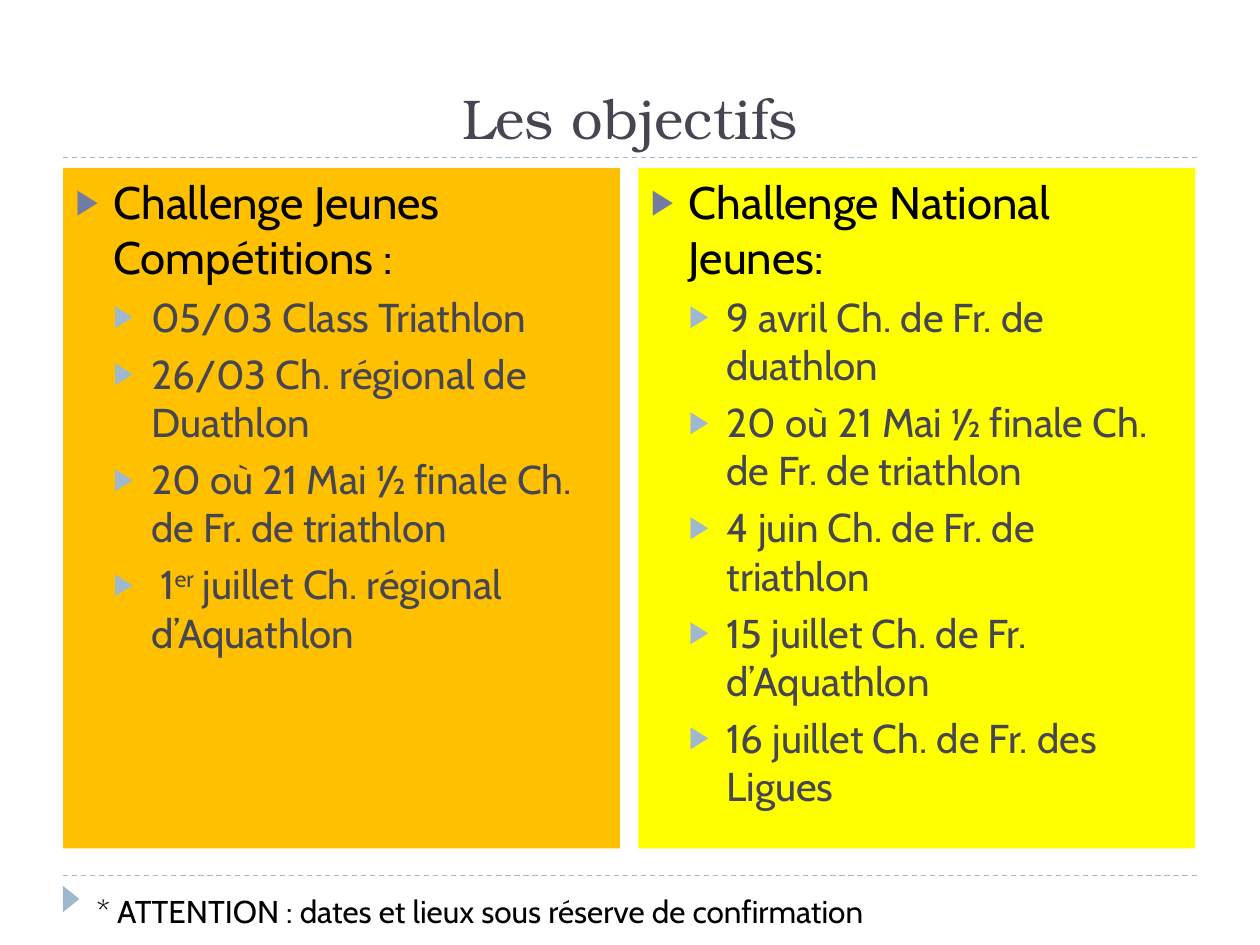
"""Build a slide of youth triathlon goals in two coloured lists."""
from dataclasses import dataclass

from lxml import etree
from pptx import Presentation
from pptx.dml.color import RGBColor
from pptx.enum.dml import MSO_LINE
from pptx.enum.shapes import MSO_CONNECTOR, MSO_SHAPE
from pptx.enum.text import MSO_ANCHOR, MSO_AUTO_SIZE, PP_ALIGN
from pptx.oxml.ns import qn
from pptx.util import Pt

LINE = MSO_CONNECTOR.STRAIGHT
MARK = MSO_SHAPE.ISOSCELES_TRIANGLE
DASH = MSO_LINE.DASH
LOW, TOP = MSO_ANCHOR.BOTTOM, MSO_ANCHOR.TOP
FIXED, GROW = MSO_AUTO_SIZE.NONE, MSO_AUTO_SIZE.SHAPE_TO_FIT_TEXT
LEFT, MID = PP_ALIGN.LEFT, PP_ALIGN.CENTER


@dataclass(frozen=True)
class Theme:
    ink: str = "464653"
    black: str = "000000"
    blue: str = "727CA3"
    pale: str = "9FB8CD"
    gold: str = "FFC000"
    lemon: str = "FFFF00"
    serif: str = "TeX Gyre Bonum"
    sans: str = "Cabin"
    title: int = 32
    head: int = 26
    item: int = 23
    note: int = 18


theme = Theme()


def write(para, text, size, color, font=theme.sans, align=LEFT, level=0, gap=0, bullet=None):
    """Fill a paragraph; text between ^ marks is raised."""
    para.alignment, para.level, para.space_before = align, level, Pt(gap)
    for i, part in enumerate(text.split("^")):
        run = para.add_run()
        run.text = part
        run.font.size, run.font.name = Pt(size), font
        run.font.color.rgb = RGBColor.from_string(color)
        if i % 2:
            run._r.get_or_add_rPr().set("baseline", "30000")
    if bullet:
        props = para._p.get_or_add_pPr()
        props.set("marL", str(Pt(21.6 * (level + 1))))
        props.set("indent", str(Pt(-21.6)))
        tint = etree.SubElement(props, qn("a:buClr"))
        etree.SubElement(tint, qn("a:srgbClr"), val=bullet)
        etree.SubElement(props, qn("a:buSzPct"), val="76000")
        etree.SubElement(props, qn("a:buChar"), char="▶")


deck = Presentation()
deck.slide_width, deck.slide_height = Pt(720), Pt(540)
slide = deck.slides.add_slide(deck.slide_layouts[3])
shapes = slide.shapes

for y in (500.4, 90):
    rule = shapes.add_connector(LINE, Pt(36), Pt(y), Pt(684), Pt(y))
    rule.line.color.rgb = RGBColor.from_string(theme.pale)
    rule.line.width, rule.line.dash_style = Pt(0.75), DASH
    etree.SubElement(rule._element.spPr, qn("a:effectLst"))

mark = shapes.add_shape(MARK, Pt(33.1), Pt(509), Pt(15.1), Pt(9.4))
mark.rotation = 90
mark.shadow.inherit = False
mark.fill.solid()
mark.fill.fore_color.rgb = RGBColor.from_string(theme.pale)
mark.line.fill.background()

title = shapes.title
title.left, title.top, title.width, title.height = Pt(36), Pt(18), Pt(648), Pt(72)
frame = title.text_frame
frame.vertical_anchor, frame.auto_size = LOW, FIXED
write(frame.paragraphs[0], "Les objectifs", theme.title, theme.ink, font=theme.serif, align=MID)

lists = [
    (1, 36, theme.gold, "Challenge Jeunes Compétitions :", [
        "05/03 Class Triathlon",
        "26/03 Ch. régional de Duathlon",
        "20 où 21 Mai ½ finale Ch. de Fr. de triathlon",
        " 1^er^ juillet Ch. régional d’Aquathlon",
    ]),
    (2, 364.8, theme.lemon, "Challenge National Jeunes:", [
        "9 avril Ch. de Fr. de duathlon",
        "20 où 21 Mai ½ finale Ch. de Fr. de triathlon",
        "4 juin Ch. de Fr. de triathlon",
        "15 juillet Ch. de Fr. d’Aquathlon",
        "16 juillet Ch. de Fr. des Ligues",
    ]),
]
for idx, x, fill, head, items in lists:
    body = slide.placeholders[idx]
    body.left, body.top, body.width, body.height = Pt(x), Pt(96), Pt(318.2), Pt(388.8)
    body.fill.solid()
    body.fill.fore_color.rgb = RGBColor.from_string(fill)
    frame = body.text_frame
    frame.vertical_anchor, frame.auto_size = TOP, FIXED
    write(frame.paragraphs[0], head, theme.head, theme.black, gap=6, bullet=theme.blue)
    for item in items:
        write(frame.add_paragraph(), item, theme.item, theme.ink,
              level=1, gap=5, bullet=theme.pale)

note = shapes.add_textbox(Pt(48.2), Pt(506.2), Pt(499), Pt(29))
frame = note.text_frame
frame.word_wrap, frame.auto_size = True, GROW
write(frame.paragraphs[0], "* ATTENTION : dates et lieux sous réserve de confirmation",
      theme.note, theme.black)

deck.save("out.pptx")
